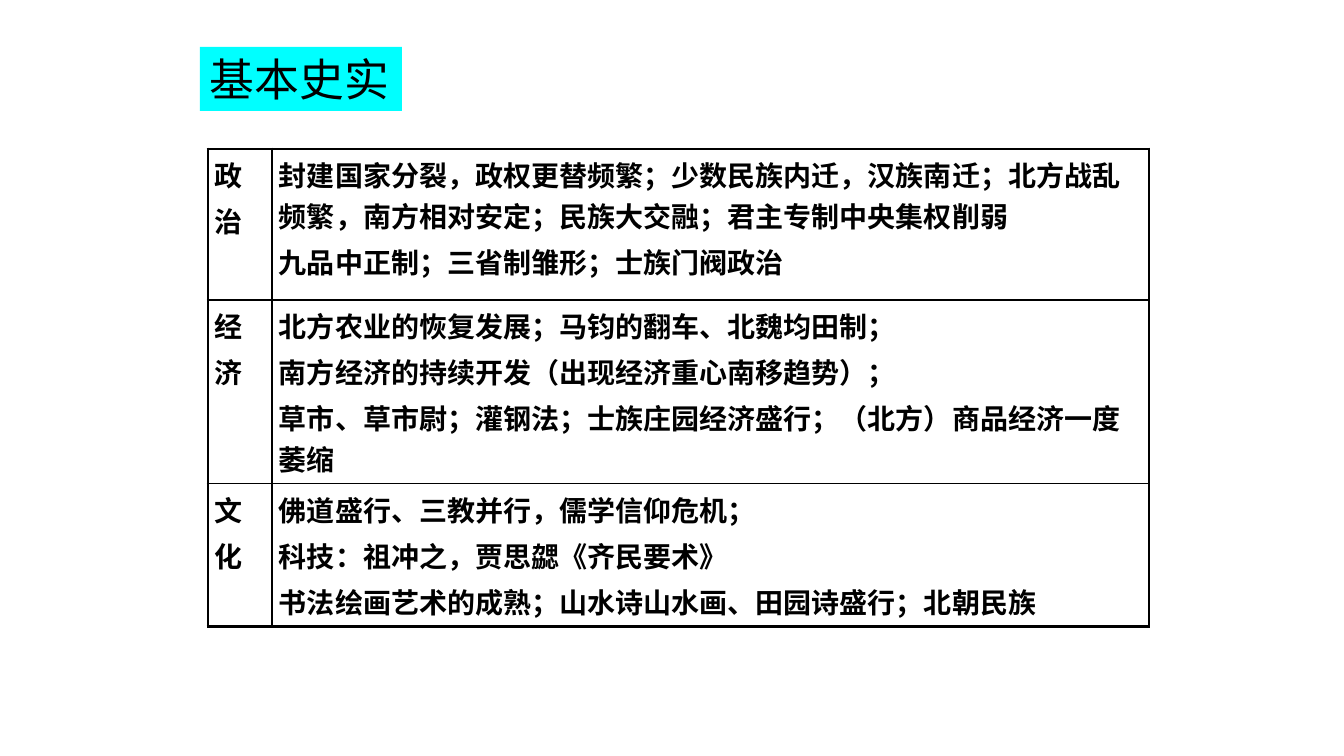
from dataclasses import dataclass

from lxml.etree import SubElement as Sub
from pptx import Presentation
from pptx.dml.color import RGBColor as Rgb
from pptx.enum.shapes import MSO_SHAPE as Kind
from pptx.enum.text import MSO_ANCHOR as Anchor
from pptx.enum.text import MSO_AUTO_SIZE as Fit
from pptx.enum.text import PP_ALIGN as Align
from pptx.oxml.ns import qn
from pptx.util import Pt

SCALE = 914400 / 100.8


@dataclass(frozen=True)
class Theme:
    ink: str = "000000"
    cyan: str = "00FFFF"
    han: str = "Noto Sans CJK SC"
    latin: str = "Arial"
    title: int = 32
    body: int = 20
    gap: int = 4
    thin: float = 1
    thick: float = 2.25


THEME = Theme()
COLS = (64, 877)
ROWS = (
    (151, ("政", "治"), (
        "封建国家分裂，政权更替频繁；少数民族内迁，汉族南迁；北方战乱频繁，南方相对安定；民族大交融；君主专制中央集权削弱",
        "九品中正制；三省制雏形；士族门阀政治")),
    (124, ("经", "济"), (
        "北方农业的恢复发展；马钧的翻车、北魏均田制；",
        "南方经济的持续开发（出现经济重心南移趋势）；",
        "草市、草市尉；灌钢法；士族庄园经济盛行；（北方）商品经济一度萎缩")),
    (126, ("文", "化"), (
        "佛道盛行、三教并行，儒学信仰危机；",
        "科技：祖冲之，贾思勰《齐民要术》",
        "书法绘画艺术的成熟；山水诗山水画、田园诗盛行；北朝民族")),
)


def px(n):
    return round(n * SCALE)


def apply(item, form):
    for name, value in form.items():
        setattr(item, name, value)


def write(frame, lines, face, size, bold=False, gap=0):
    for i, line in enumerate(lines):
        para = frame.paragraphs[0] if i == 0 else frame.add_paragraph()
        apply(para, {"alignment": Align.LEFT, "space_before": Pt(gap)})
        run = para.add_run()
        run.text = line
        apply(run.font, {"name": face, "size": Pt(size), "bold": bold})
        run.font.color.rgb = Rgb.from_string(THEME.ink)
        Sub(run.font._element, qn("a:ea"), typeface=THEME.han)


def edge(cell, side, width):
    line = Sub(cell._tc.get_or_add_tcPr(), qn("a:ln" + side), w=str(Pt(width)))
    fill = Sub(line, qn("a:solidFill"))
    Sub(fill, qn("a:srgbClr"), val=THEME.ink)


def frame_cell(cell, row, col):
    outer = {"L": col == 0, "R": col == len(COLS) - 1,
             "T": row == 0, "B": row == len(ROWS) - 1}
    for side, rim in outer.items():
        edge(cell, side, THEME.thick if rim else THEME.thin)
    cell.fill.background()
    apply(cell, {"margin_left": px(7), "margin_right": px(7),
                 "margin_top": px(5), "margin_bottom": px(5),
                 "vertical_anchor": Anchor.TOP})


def add_facts(slide, left, top):
    high = sum(row[0] for row in ROWS)
    table = slide.shapes.add_table(
        len(ROWS), len(COLS), px(left), px(top), px(sum(COLS)), px(high)).table
    apply(table, {"first_row": False, "horz_banding": False})
    for col, width in zip(table.columns, COLS):
        col.width = px(width)
    for r, (height, *texts) in enumerate(ROWS):
        table.rows[r].height = px(height)
        for c, lines in enumerate(texts):
            cell = table.cell(r, c)
            frame_cell(cell, r, c)
            face = THEME.han if c else THEME.latin
            write(cell.text_frame, lines, face, THEME.body, True, THEME.gap)


def add_title(slide, text, left, top, width, height):
    box = slide.shapes.add_shape(
        Kind.RECTANGLE, px(left), px(top), px(width), px(height))
    box.shadow.inherit = False
    box.fill.solid()
    box.fill.fore_color.rgb = Rgb.from_string(THEME.cyan)
    box.line.fill.background()
    apply(box.text_frame, {"word_wrap": False,
                           "auto_size": Fit.SHAPE_TO_FIT_TEXT,
                           "vertical_anchor": Anchor.TOP})
    write(box.text_frame, [text], THEME.han, THEME.title)


def main():
    deck = Presentation()
    apply(deck, {"slide_width": px(1344), "slide_height": px(756)})
    slide = deck.slides.add_slide(deck.slide_layouts[6])
    add_facts(slide, 208, 149)
    add_title(slide, "基本史实", 200, 47, 202, 64)
    deck.save("out.pptx")


if __name__ == "__main__":
    main()
